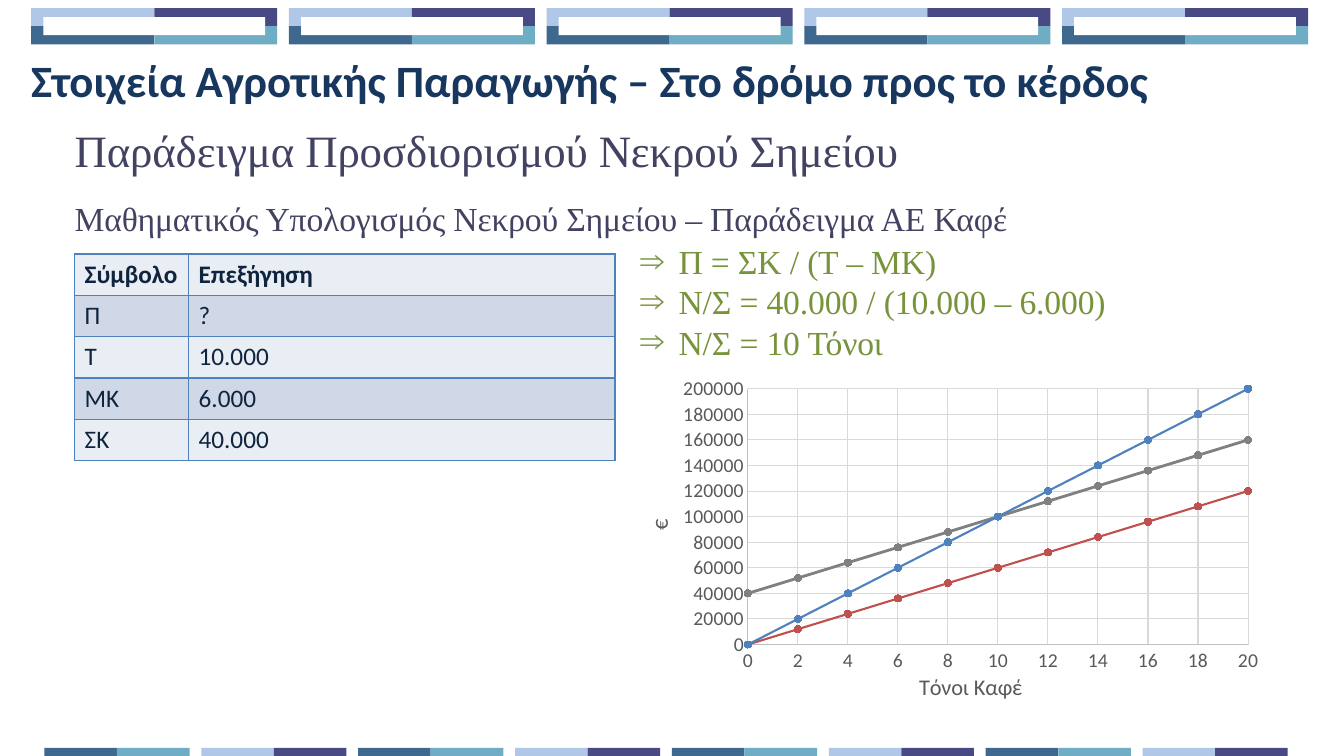
from lxml import etree
from pptx import Presentation, util as u
from pptx.chart.data import XyChartData
from pptx.dml.color import RGBColor
from pptx.enum import chart as ch, shapes, text
from pptx.oxml import parse_xml
from pptx.oxml.ns import nsdecls, qn

PX = 9144  # EMU in one px, 100 px to the inch
NAVY, TEAL, STEEL, SKY = "494983", "6EADC4", "3E688E", "B1C7E7"
BLUE, RED, GREY = "4F81BD", "C0504D", "808080"
INK, AXIS_INK = "0F243E", "595959"
SANS, SERIF = "Calibri", "Times New Roman"


def px(*values):
    return [u.Emu(round(v * PX)) for v in values]


def rgb(code):
    return RGBColor.from_string(code)


def style_font(font, size, color, name=SANS, bold=False):
    font.size, font.name, font.bold = u.Pt(size), name, bold
    font.color.rgb = rgb(color)


def style_line(line, color, width):
    line.color.rgb = rgb(color)
    line.width = u.Pt(width)


def add_rect(s, x, y, w, h, color):
    sp = s.shapes.add_shape(shapes.MSO_SHAPE.RECTANGLE, *px(x, y, w, h))
    sp.shadow.inherit = False
    sp.fill.solid()
    sp.fill.fore_color.rgb = rgb(color)
    sp.line.fill.background()


def add_bullet(p, char, indent):
    pPr = p._p.get_or_add_pPr()
    pPr.set("marL", str(indent * PX))
    pPr.set("indent", str(-indent * PX))
    etree.SubElement(pPr, qn("a:buFont")).set("typeface", SERIF)
    etree.SubElement(pPr, qn("a:buChar")).set("char", char)


def add_text(s, box, lines, size, color, name=SERIF, bold=False,
             inset=0, spacing=None, tracking=-10, bullet=None):
    tf = s.shapes.add_textbox(*px(*box)).text_frame
    tf.word_wrap = True
    tf.auto_size = text.MSO_AUTO_SIZE.SHAPE_TO_FIT_TEXT
    tf.margin_left = tf.margin_right = px(inset)[0]
    tf.margin_top = tf.margin_bottom = px(inset // 2)[0]
    for i, line in enumerate(lines):
        p = tf.paragraphs[0] if i == 0 else tf.add_paragraph()
        if spacing:
            p.line_spacing = spacing
        if bullet:
            add_bullet(p, bullet, 38)
        r = p.add_run()
        r.text = line
        style_font(r.font, size, color, name, bold)
        if tracking:
            r.font._element.set("spc", str(tracking))


def add_cell_borders(cell, color):
    tcPr = cell._tc.get_or_add_tcPr()
    for side in "LRTB":
        tcPr.append(parse_xml(
            f'<a:ln{side} {nsdecls("a")} w="12700"><a:solidFill>'
            f'<a:srgbClr val="{color}"/></a:solidFill></a:ln{side}>'))


def add_symbol_table(s, x, y, col_widths, row_height, rows):
    size = px(x, y, sum(col_widths), row_height * len(rows))
    table = s.shapes.add_table(len(rows), len(col_widths), *size).table
    for column, width in zip(table.columns, col_widths):
        column.width = px(width)[0]
    for i, row in enumerate(rows):
        table.rows[i].height = px(row_height)[0]
        for j, value in enumerate(row):
            cell = table.cell(i, j)
            add_cell_borders(cell, BLUE)
            cell.fill.solid()
            cell.fill.fore_color.rgb = rgb("D0D8E8" if i % 2 else "E9EDF4")
            r = cell.text_frame.paragraphs[0].add_run()
            r.text = value
            style_font(r.font, 18, INK, bold=i == 0)


def style_axis(axis, title, top, step):
    axis.minimum_scale, axis.maximum_scale, axis.major_unit = 0, top, step
    axis.major_tick_mark = axis.minor_tick_mark = ch.XL_TICK_MARK.NONE
    axis.has_major_gridlines = True
    style_line(axis.major_gridlines.format.line, "D9D9D9", 0.75)
    style_line(axis.format.line, "BFBFBF", 0.75)
    style_font(axis.tick_labels.font, 14, AXIS_INK)
    axis.tick_labels.number_format = "General"
    axis.tick_labels.number_format_is_linked = False
    r = axis.axis_title.text_frame.paragraphs[0].add_run()
    r.text = title
    style_font(r.font, 16, AXIS_INK)


def set_plot_layout(chart, x, y, w, h):
    plot_area = chart._chartSpace.chart.plotArea
    for old in plot_area.findall(qn("c:layout")):
        plot_area.remove(old)
    sizes = "".join(f'<c:{tag} val="{v}"/>'
                    for tag, v in zip("xywh", (x, y, w, h)))
    plot_area.insert(0, parse_xml(
        f'<c:layout {nsdecls("c")}><c:manualLayout>'
        '<c:layoutTarget val="inner"/><c:xMode val="edge"/>'
        f'<c:yMode val="edge"/>{sizes}</c:manualLayout></c:layout>'))


def add_break_even_chart(s, box, lines):
    data = XyChartData()
    for i, (fixed, per_ton, _, _) in enumerate(lines, 1):
        series = data.add_series(f"Series {i}")
        for tons in range(0, 21, 2):
            series.add_data_point(tons, fixed + per_ton * tons)
    chart = s.shapes.add_chart(ch.XL_CHART_TYPE.XY_SCATTER_LINES,
                               *px(*box), data).chart
    chart.has_legend = chart.has_title = False
    style_font(chart.font, 10, "000000")
    chart.plots[0].vary_by_categories = False
    style_axis(chart.category_axis, "Τόνοι Καφέ", 20, 2)
    style_axis(chart.value_axis, "€", 200000, 20000)
    set_plot_layout(chart, 0.17, 0.05, 0.79, 0.76)
    for series, (_, _, color, width) in zip(chart.plots[0].series, lines):
        series.smooth = False
        style_line(series.format.line, color, width)
        marker = series.marker
        marker.style, marker.size = ch.XL_MARKER_STYLE.CIRCLE, 5
        marker.format.fill.solid()
        marker.format.fill.fore_color.rgb = rgb(color)
        style_line(marker.format.line, color, 0.75)


def add_top_band(s):
    for i in range(5):
        x = 31 + 255.6 * i
        for k, color in enumerate((SKY, NAVY, STEEL, TEAL)):
            add_rect(s, x + 122 * (k % 2), 8 + 18 * (k // 2), 122, 18, color)
        add_rect(s, x + 12, 17, 220, 18, "FFFFFF")


def add_bottom_band(s):
    for i in range(8):
        x = 44 + 155.6 * i
        pair = (SKY, NAVY) if i % 2 else (STEEL, TEAL)
        for k, color in enumerate(pair):
            add_rect(s, x + 72 * k, 742, 72, 8, color)


def main():
    prs = Presentation()
    prs.slide_width, prs.slide_height = px(1333, 750)
    s = prs.slides.add_slide(prs.slide_layouts[6])

    # Decorative bands
    add_top_band(s)
    add_bottom_band(s)

    # Headings
    add_text(s, (21, 47, 1229, 64),
             ["Στοιχεία Αγροτικής Παραγωγής – Στο δρόμο προς το κέρδος"],
             32, "17375E", name=SANS, bold=True, inset=10, tracking=0)
    add_text(s, (74, 95, 1124, 71),
             ["Παράδειγμα Προσδιορισμού Νεκρού Σημείου"],
             32, "424262", spacing=1.5)
    add_text(s, (74, 176, 1124, 53),
             ["Μαθηματικός Υπολογισμός Νεκρού Σημείου – Παράδειγμα ΑΕ Καφέ"],
             24, "424262", spacing=1.5)

    # Symbols and their values
    add_symbol_table(s, 74, 252, (113, 423), 41, [
        ("Σύμβολο", "Επεξήγηση"), ("Π", "?"), ("Τ", "10.000"),
        ("ΜΚ", "6.000"), ("ΣΚ", "40.000")])

    # Calculation
    add_text(s, (635, 239, 628, 121),
             ["Π = ΣΚ / (Τ – ΜΚ)", "Ν/Σ = 40.000 / (10.000 – 6.000)",
              "Ν/Σ = 10 Τόνοι"], 24, "77933C", bullet="⇒")

    # Revenue, variable cost and total cost: fixed, per ton, colour, width
    add_break_even_chart(s, (635, 369, 628, 334), [
        (0, 10000, BLUE, 1.5), (0, 6000, RED, 1.5), (40000, 6000, GREY, 2)])

    prs.save("out.pptx")


if __name__ == "__main__":
    main()
